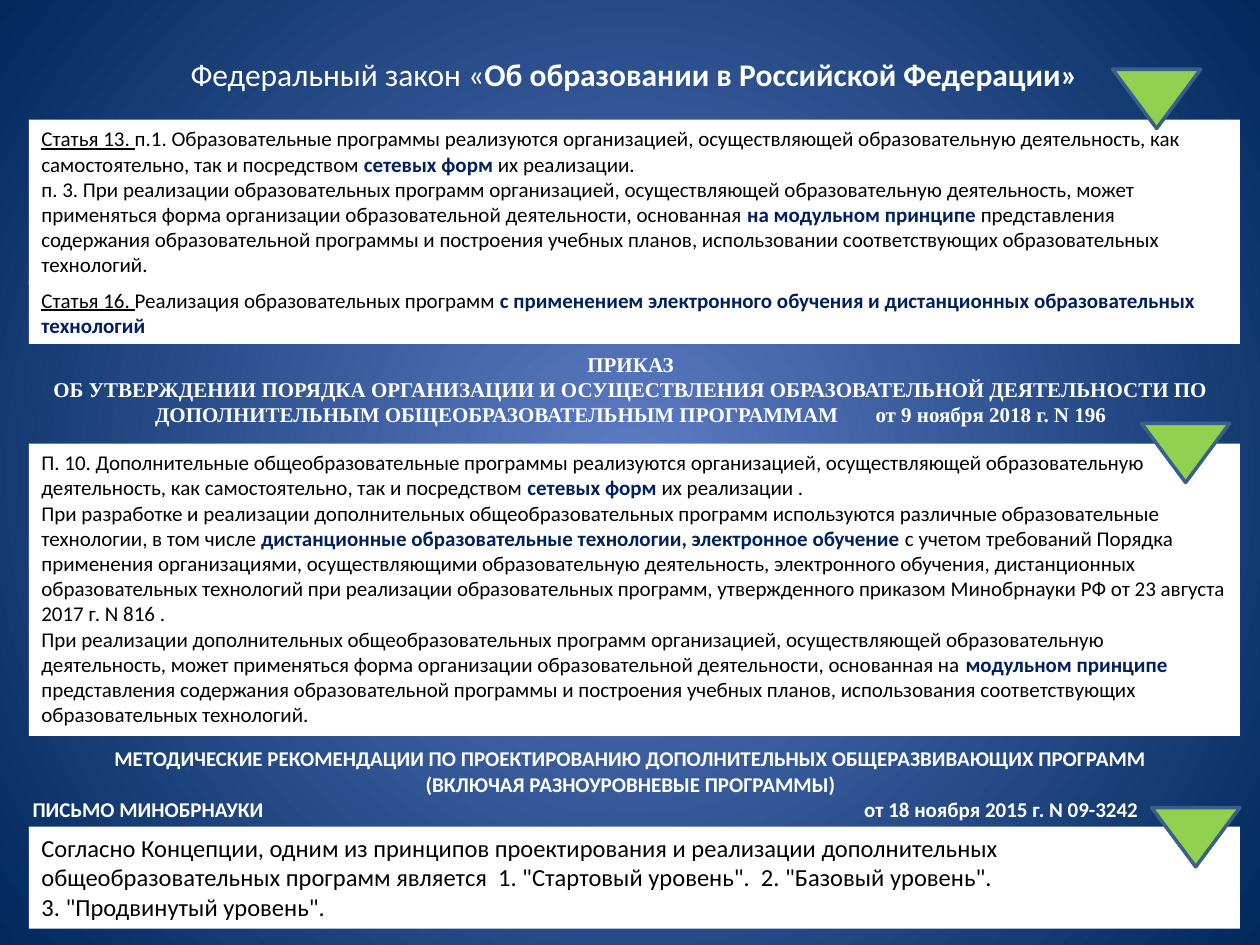
from dataclasses import dataclass

from lxml import etree
from pptx import Presentation
from pptx.dml.color import RGBColor
from pptx.enum.shapes import MSO_SHAPE
from pptx.enum.text import MSO_ANCHOR, MSO_AUTO_SIZE, PP_ALIGN
from pptx.oxml.ns import qn
from pptx.slide import Slide
from pptx.text.text import TextFrame
from pptx.util import Inches, Pt

RECTANGLE = MSO_SHAPE.RECTANGLE
MERGE = MSO_SHAPE.FLOWCHART_MERGE
TOP, MIDDLE = MSO_ANCHOR.TOP, MSO_ANCHOR.MIDDLE
LEFT, CENTER = PP_ALIGN.LEFT, PP_ALIGN.CENTER
FIXED_SIZE = MSO_AUTO_SIZE.NONE

WHITE = RGBColor(0xFF, 0xFF, 0xFF)
BLACK = RGBColor(0x00, 0x00, 0x00)
NAVY = RGBColor(0x00, 0x20, 0x60)
GREEN = RGBColor(0x92, 0xD0, 0x50)
MARKER_LINE = RGBColor(0x3A, 0x5F, 0x8C)
GLOW = RGBColor(0x5E, 0x7C, 0xC5)
DEEP_BLUE = RGBColor(0x00, 0x29, 0x5C)

PANEL_LEFT, PANEL_WIDTH = 0.23, 9.61
HEADING_LEFT, HEADING_WIDTH = 0.16, 9.69
DATE_TAB = 6.6


@dataclass(frozen=True)
class Span:
    text: str
    color: RGBColor = BLACK
    bold: bool = False
    underline: bool = False
    spacing: float = 0


@dataclass(frozen=True)
class Line:
    spans: tuple[Span, ...]
    align: PP_ALIGN = LEFT
    tab: float = 0


@dataclass(frozen=True)
class Panel:
    top: float
    height: float
    lines: tuple[Line, ...]
    size: int = 12


@dataclass(frozen=True)
class Heading:
    top: float
    height: float
    bottom_margin: float
    font: str
    lines: tuple[Line, ...]


@dataclass(frozen=True)
class Marker:
    left: float
    top: float


def key(text: str) -> Span:
    return Span(text, NAVY, bold=True)


def article(text: str) -> Span:
    return Span(text, underline=True)


def caption(text: str, spacing: float = 0) -> Span:
    return Span(text, WHITE, bold=True, spacing=spacing)


TITLE = Line((Span("Федеральный закон «", WHITE), caption("Об образовании в Российской Федерации»")), CENTER)

PANELS = (
    Panel(3.52, 2.32, (
        Line((
            Span("П. 10. Дополнительные общеобразовательные программы реализуются организацией, осуществляющей "
                 "образовательную деятельность, как самостоятельно, так и посредством "),
            key("сетевых форм "),
            Span("их реализации ."))),
        Line((
            Span("При разработке и реализации дополнительных общеобразовательных программ используются различные "
                 "образовательные технологии, в том числе "),
            key("дистанционные образовательные технологии, электронное обучение "),
            Span("с учетом требований Порядка применения организациями, осуществляющими образовательную деятельность, "
                 "электронного обучения, дистанционных образовательных технологий при реализации образовательных "
                 "программ, утвержденного приказом Минобрнауки РФ от 23 августа 2017 г. N 816 ."))),
        Line((
            Span("При реализации дополнительных общеобразовательных программ организацией, осуществляющей "
                 "образовательную деятельность, может применяться форма организации образовательной деятельности, "
                 "основанная на "),
            key("модульном принципе "),
            Span("представления содержания образовательной программы и построения учебных планов, использования "
                 "соответствующих образовательных технологий."))))),
    Panel(6.56, 0.81, (
        Line((Span("Согласно Концепции, одним из принципов проектирования и реализации дополнительных "
                   "общеобразовательных программ является  1. \"Стартовый уровень\".  2. \"Базовый уровень\"."),)),
        Line((Span("3. \"Продвинутый уровень\"."),))), 14),
    Panel(2.23, 0.5, (
        Line((
            article("Статья 16. "),
            Span("Реализация образовательных программ "),
            key("с применением электронного обучения и дистанционных образовательных технологий"))),)),
    Panel(0.95, 1.31, (
        Line((
            article("Статья 13. "),
            Span("п.1. Образовательные программы реализуются организацией, осуществляющей образовательную "
                 "деятельность, как самостоятельно, так и посредством "),
            key("сетевых форм "),
            Span("их реализации."))),
        Line((
            Span("п. 3. При реализации образовательных программ организацией, осуществляющей образовательную "
                 "деятельность, может применяться форма организации образовательной деятельности, основанная "),
            key("на модульном принципе "),
            Span("представления содержания образовательной программы и построения учебных планов, использовании "
                 "соответствующих образовательных технологий."))))),
)

HEADINGS = (
    Heading(2.73, 0.91, 0.24, "Times New Roman", (
        Line((caption("ПРИКАЗ"),), CENTER),
        Line((
            caption("ОБ УТВЕРЖДЕНИИ ПОРЯДКА ОРГАНИЗАЦИИ И ОСУЩЕСТВЛЕНИЯ ОБРАЗОВАТЕЛЬНОЙ ДЕЯТЕЛЬНОСТИ ПО "
                    "ДОПОЛНИТЕЛЬНЫМ ОБЩЕОБРАЗОВАТЕЛЬНЫМ ПРОГРАММАМ"),
            caption(" ", spacing=18),
            caption("от 9 ноября 2018 г. N 196")), CENTER))),
    Heading(5.86, 0.94, 0.27, "Calibri", (
        Line((caption("МЕТОДИЧЕСКИЕ РЕКОМЕНДАЦИИ ПО ПРОЕКТИРОВАНИЮ ДОПОЛНИТЕЛЬНЫХ ОБЩЕРАЗВИВАЮЩИХ ПРОГРАММ"),), CENTER),
        Line((caption("(ВКЛЮЧАЯ РАЗНОУРОВНЕВЫЕ ПРОГРАММЫ)"),), CENTER),
        Line((caption("ПИСЬМО МИНОБРНАУКИ\tот 18 ноября 2015 г. N 09-3242"),), tab=DATE_TAB))),
)

MARKERS = (Marker(8.83, 0.55), Marker(9.06, 3.36), Marker(9.14, 6.41))


def paint_background(slide: Slide) -> None:
    fill = slide.background.fill
    fill.gradient()
    for stop, color in zip(fill.gradient_stops, (GLOW, DEEP_BLUE)):
        stop.color.rgb = color
    linear = next(slide.element.iter(qn("a:lin")))
    radial = etree.Element(qn("a:path"), path="circle")
    etree.SubElement(radial, qn("a:fillToRect"), l="50000", t="50000", r="50000", b="50000")
    linear.getparent().replace(linear, radial)


def write_lines(frame: TextFrame, lines: tuple[Line, ...], size: int,
                font: str = "Calibri", anchor: MSO_ANCHOR = TOP) -> None:
    frame.word_wrap = True
    frame.auto_size = FIXED_SIZE
    frame.vertical_anchor = anchor
    for index, line in enumerate(lines):
        paragraph = frame.add_paragraph() if index else frame.paragraphs[0]
        paragraph.alignment = line.align
        if line.tab:
            tabs = etree.SubElement(paragraph._p.get_or_add_pPr(), qn("a:tabLst"))
            etree.SubElement(tabs, qn("a:tab"), pos=str(Inches(line.tab)), algn="l")
        for span in line.spans:
            run = paragraph.add_run()
            run.text = span.text
            run.font.name = font
            run.font.size = Pt(size)
            run.font.bold = span.bold
            run.font.underline = span.underline
            run.font.color.rgb = span.color
            if span.spacing:
                run.font._element.set("spc", str(int(span.spacing * 100)))


def draw_panel(slide: Slide, panel: Panel) -> None:
    shape = slide.shapes.add_shape(RECTANGLE, Inches(PANEL_LEFT), Inches(panel.top),
                                   Inches(PANEL_WIDTH), Inches(panel.height))
    shape.shadow.inherit = False
    shape.fill.solid()
    shape.fill.fore_color.rgb = WHITE
    shape.line.fill.background()
    write_lines(shape.text_frame, panel.lines, panel.size)


def draw_heading(slide: Slide, heading: Heading) -> None:
    shape = slide.shapes.add_textbox(Inches(HEADING_LEFT), Inches(heading.top),
                                     Inches(HEADING_WIDTH), Inches(heading.height))
    shape.text_frame.margin_bottom = Inches(heading.bottom_margin)
    write_lines(shape.text_frame, heading.lines, 12, heading.font, MIDDLE)


def draw_marker(slide: Slide, marker: Marker) -> None:
    shape = slide.shapes.add_shape(MERGE, Inches(marker.left), Inches(marker.top), Inches(0.7), Inches(0.47))
    shape.shadow.inherit = False
    shape.fill.solid()
    shape.fill.fore_color.rgb = GREEN
    shape.line.color.rgb = MARKER_LINE
    shape.line.width = Pt(2)


def main() -> None:
    presentation = Presentation()
    presentation.slide_width, presentation.slide_height = Inches(10), Inches(7.5)
    slide = presentation.slides.add_slide(presentation.slide_layouts[5])
    paint_background(slide)
    title = slide.shapes.title
    title.left, title.top = Inches(PANEL_LEFT), Inches(0.39)
    title.width, title.height = Inches(PANEL_WIDTH), Inches(0.4)
    write_lines(title.text_frame, (TITLE,), 18)
    for panel in PANELS:
        draw_panel(slide, panel)
    for heading in HEADINGS:
        draw_heading(slide, heading)
    for marker in MARKERS:
        draw_marker(slide, marker)
    presentation.save("out.pptx")


if __name__ == "__main__":
    main()
